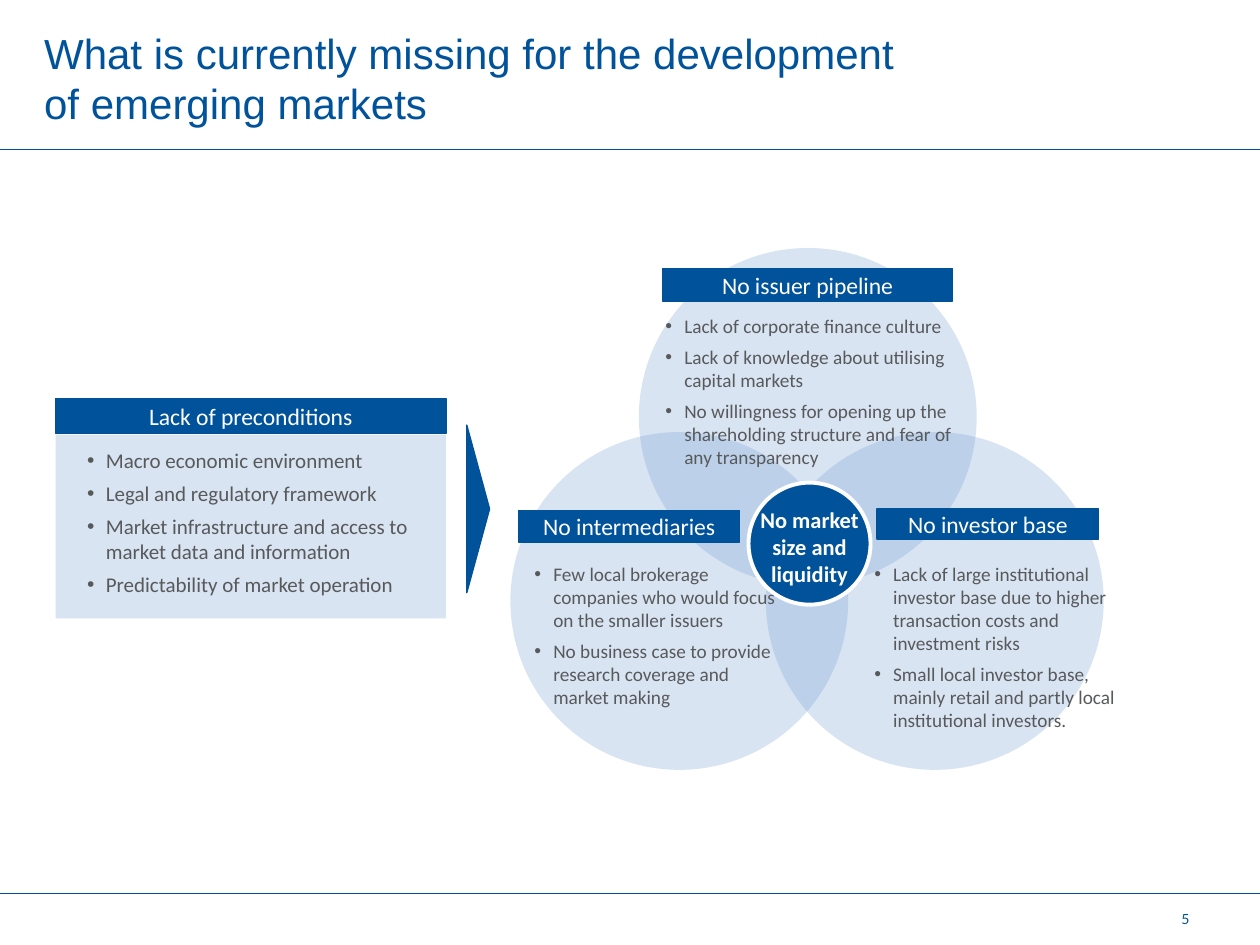
from lxml import etree
from pptx import Presentation
from pptx import util as u
from pptx.dml.color import RGBColor
from pptx.enum import shapes, text
from pptx.oxml import ns

Cm, Pt = u.Cm, u.Pt
KIND, ALIGN, ANCHOR = shapes.MSO_SHAPE, text.PP_ALIGN, text.MSO_ANCHOR
NAVY = RGBColor(0x00, 0x53, 0x9B)
RULE = RGBColor(0x00, 0x51, 0x98)
PALE = RGBColor(0x7E, 0xA6, 0xD7)
GREY = RGBColor(0x58, 0x59, 0x5B)
WHITE = RGBColor(0xFF, 0xFF, 0xFF)

DISCS = [(10.29, 8.71), (15.44, 8.71), (12.88, 5)]
HEADS = [
    ("No issuer pipeline", (13.36, 5.41, 5.84, 0.66)),
    ("No intermediaries", (10.46, 10.29, 4.45, 0.64)),
    ("No investor base", (17.68, 10.26, 4.47, 0.61)),
    ("Lack of preconditions", (1.12, 8.03, 7.87, 0.71)),
]
LISTS = [
    ((1.5, 8.89, 7.49, 3.35), 12, [
        "Macro economic environment",
        "Legal and regulatory framework",
        "Market infrastructure and access to market data and information",
        "Predictability of market operation"]),
    ((10.52, 11.2, 5.51, 3.25), 11, [
        "Few local brokerage companies who would focus on the smaller issuers",
        "No business case to provide research coverage and market making"]),
    ((17.37, 11.2, 5.56, 3.73), 11, [
        "Lack of large institutional investor base due to higher "
        "transaction costs and investment risks",
        "Small local investor base, mainly retail and partly local "
        "institutional investors."]),
    ((13.16, 6.2, 6.58, 3.43), 11, [
        "Lack of corporate finance culture",
        "Lack of knowledge about utilising capital markets",
        "No willingness for opening up the shareholding structure "
        "and fear of any transparency"]),
]


def place(item, box):
    """Set position and size from centimetres."""
    item.left, item.top, item.width, item.height = map(Cm, box)


def mark(para):
    """Give a paragraph a hanging round bullet."""
    props = para._p.get_or_add_pPr()
    props.set("marL", str(Cm(0.38)))
    props.set("indent", str(-Cm(0.38)))
    etree.SubElement(props, ns.qn("a:buChar")).set("char", "•")


def write(item, *lines, size=13.5, face="Calibri", color=WHITE, bold=False,
          align=ALIGN.CENTER, anchor=ANCHOR.MIDDLE, after=0, bullet=False, inset=True):
    """Fill a shape with formatted paragraphs."""
    frame = item.text_frame
    frame.auto_size = text.MSO_AUTO_SIZE.NONE
    frame.word_wrap = True
    frame.vertical_anchor = anchor
    if not inset:
        frame.margin_left = frame.margin_right = 0
        frame.margin_top = frame.margin_bottom = 0
    for i, line in enumerate(lines):
        para = frame.add_paragraph() if i else frame.paragraphs[0]
        if bullet:
            mark(para)
        para.alignment = align
        para.space_before, para.space_after = Pt(0), Pt(after)
        run = para.add_run()
        run.text = line
        font = run.font
        font.size, font.name, font.bold = Pt(size), face, bold
        font.color.rgb = color


def shape(slide, kind, box, fill=NAVY, line=None, width=0.75, alpha=None):
    """Draw a filled preset shape."""
    item = slide.shapes.add_shape(kind, *map(Cm, box))
    item.shadow.inherit = False
    item.fill.solid()
    item.fill.fore_color.rgb = fill
    if alpha:
        tint = item.element.spPr.find(".//" + ns.qn("a:srgbClr"))
        etree.SubElement(tint, ns.qn("a:alpha")).set("val", str(alpha * 1000))
    if line is None:
        item.line.fill.background()
    else:
        item.line.color.rgb = line
        item.line.width = Pt(width)
    return item


def rule(slide, top):
    """Draw a thin line across the slide."""
    item = slide.shapes.add_connector(
        shapes.MSO_CONNECTOR.STRAIGHT, 0, Cm(top), Cm(25.4), Cm(top))
    item.line.color.rgb = RULE
    item.line.width = Pt(0.25)
    etree.SubElement(item.element.spPr, ns.qn("a:effectLst"))


def label(slide, words, box, **style):
    """Add a free text box."""
    write(slide.shapes.add_textbox(*map(Cm, box)), words, **style)


def points(item, box, size, lines):
    """Fill a body placeholder with bullets and bring it to the front."""
    place(item, box)
    write(item, *lines, size=size, color=GREY, align=ALIGN.LEFT,
          anchor=ANCHOR.TOP, after=4.5, bullet=True)
    item.element.getparent().append(item.element)


def main():
    """Build the slide."""
    deck = Presentation()
    deck.slide_width, deck.slide_height = Cm(25.4), Cm(19.05)
    slide = deck.slides.add_slide(deck.slide_layouts.get_by_name("Comparison"))
    title, *bodies = list(slide.placeholders)

    place(title, (0.89, 0.43, 17.78, 2.26))
    write(title, "What is currently missing for the development of emerging markets",
          size=24, face="Arial", color=NAVY, align=ALIGN.LEFT, inset=False)
    for top in (3, 18.01):
        rule(slide, top)
    label(slide, "5", (22.99, 18.01, 0.99, 1.04), size=8, face="Lato",
          color=NAVY, align=ALIGN.RIGHT, inset=False)

    for spot in DISCS:
        shape(slide, KIND.OVAL, (*spot, 6.81, 6.81), PALE, alpha=30)
    arrow = shape(slide, KIND.ISOSCELES_TRIANGLE, (7.95, 10.03, 3.38, 0.46), line=RULE)
    arrow.rotation = 90
    shape(slide, KIND.RECTANGLE, (1.12, 8.76, 7.87, 3.71), PALE, alpha=30)
    for words, box in HEADS:
        write(shape(slide, KIND.RECTANGLE, box, line=RULE), words)
    shape(slide, KIND.OVAL, (15.09, 9.73, 2.46, 2.46), line=WHITE, width=2.25)
    label(slide, "No market size and liquidity", (14.81, 10.34, 3.02, 1.35),
          size=12.8, bold=True, after=4.5)
    for item, content in zip(bodies, LISTS):
        points(item, *content)
    deck.save("out.pptx")


if __name__ == "__main__":
    main()
